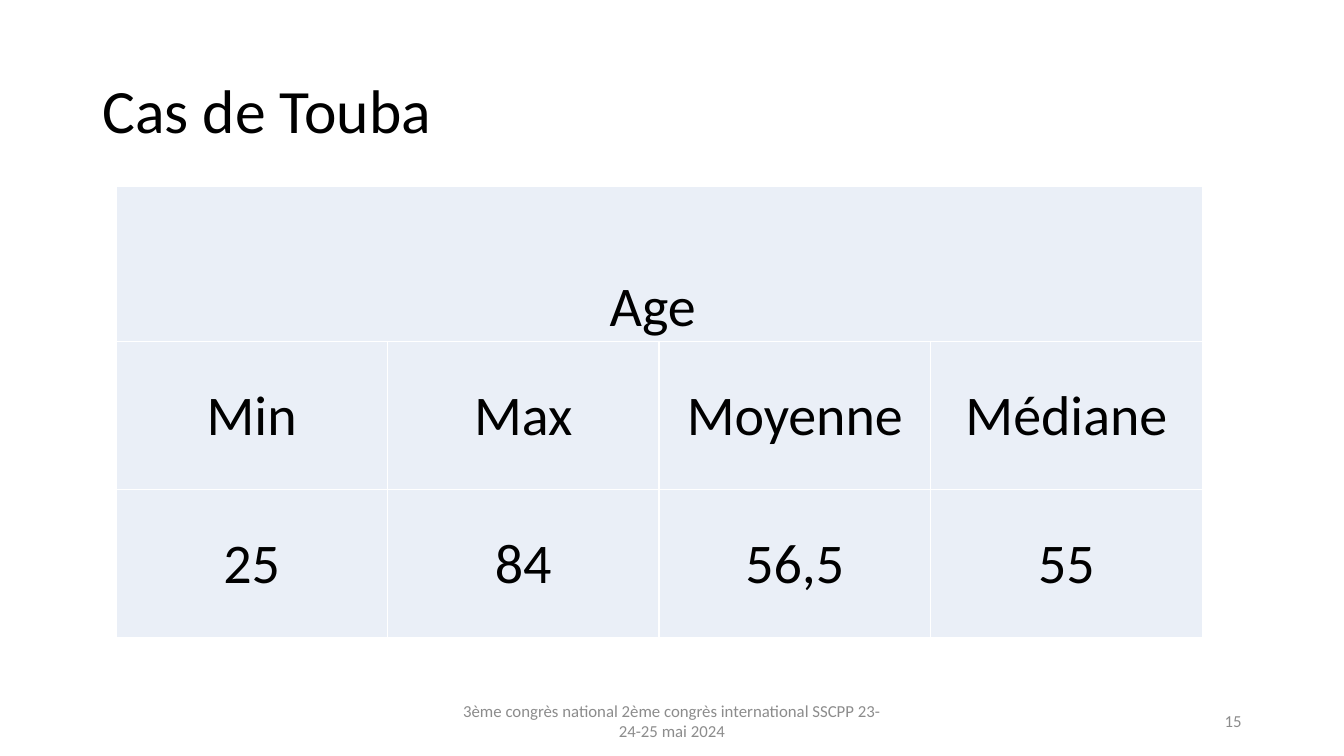
import pptx
import pptx.util
import pptx.dml.color
import pptx.enum.text
import pptx.oxml

Pt = pptx.util.Pt
RGB = pptx.dml.color.RGBColor.from_string
Align = pptx.enum.text.PP_ALIGN
Anchor = pptx.enum.text.MSO_ANCHOR

TITLE = "Cas de Touba"
HEAD = "Age "
ROWS = [
    ["Min", "Max", "Moyenne", "Médiane"],
    ["25", "84", "56,5", "55"],
]
FOOTERS = [
    ("15", (678, 500.5, 216, 28.8), Align.RIGHT),
    ("3ème congrès national 2ème congrès international SSCPP 23-24-25 mai 2024",
     (318, 500.5, 324, 28.8), Align.CENTER),
]
THEME = {
    "font": "Calibri",
    "ink": "000000",
    "muted": "8C8C8C",
    "cell": "EAEFF7",
    "rule": "FFFFFF",
    "title": 44,
    "body": 40,
    "small": 12,
}
TITLE_BOX = (66, 28.8, 828, 104.4)
GRID_BOX = (82.8, 133.2, 776, 322.4)
HEIGHTS = [110.8, 105.8, 105.8]
CELL = {"margin_left": Pt(0.7), "margin_right": Pt(0.7),
        "margin_top": Pt(0.7), "margin_bottom": Pt(0)}


def apply(item, values):
    for name, value in values.items():
        setattr(item, name, value)


def place(shape, box):
    apply(shape, dict(zip(("left", "top", "width", "height"), map(Pt, box))))


def write(frame, text, size, color, align, spacing=None):
    frame.text = text
    para = frame.paragraphs[0]
    apply(para, {"alignment": align, "line_spacing": spacing})
    font = para.runs[0].font
    apply(font, {"name": THEME["font"], "size": Pt(THEME[size]), "bold": False})
    font.color.rgb = RGB(THEME[color])


def border(cell):
    """Draw a 1 pt rule on all four sides; call before filling the cell."""
    props = cell._tc.get_or_add_tcPr()
    for side in "LRTB":
        props.append(pptx.oxml.parse_xml(
            f'<a:ln{side} xmlns:a="http://schemas.openxmlformats.org/drawingml/2006/main"'
            f' w="{Pt(1)}"><a:solidFill><a:srgbClr val="{THEME["rule"]}"/>'
            f'</a:solidFill></a:ln{side}>'))


def add_grid(slide):
    count = len(ROWS[0])
    table = slide.shapes.add_table(len(HEIGHTS), count, *map(Pt, GRID_BOX)).table
    apply(table, {"first_row": False, "horz_banding": False})
    for col in table.columns:
        col.width = Pt(GRID_BOX[2] / count)
    for row, height in zip(table.rows, HEIGHTS):
        row.height = Pt(height)
    for cell in table.iter_cells():
        border(cell)
        cell.fill.solid()
        cell.fill.fore_color.rgb = RGB(THEME["cell"])
        apply(cell, {**CELL, "vertical_anchor": Anchor.MIDDLE})
    head = table.cell(0, 0)
    head.merge(table.cell(0, count - 1))
    head.vertical_anchor = Anchor.BOTTOM
    write(head.text_frame, HEAD, "body", "ink", Align.CENTER)
    for r, words in enumerate(ROWS, 1):
        for c, word in enumerate(words):
            write(table.cell(r, c).text_frame, word, "body", "ink", Align.CENTER)


def main():
    deck = pptx.Presentation()
    apply(deck, {"slide_width": Pt(960), "slide_height": Pt(540)})
    slide = deck.slides.add_slide(deck.slide_layouts[5])

    title = slide.shapes.title
    place(title, TITLE_BOX)
    apply(title.text_frame, {"vertical_anchor": Anchor.MIDDLE,
                             "auto_size": pptx.enum.text.MSO_AUTO_SIZE.NONE})
    write(title.text_frame, TITLE, "title", "ink", Align.LEFT, 0.9)

    add_grid(slide)

    for text, box, align in FOOTERS:
        frame = slide.shapes.add_textbox(*map(Pt, box)).text_frame
        apply(frame, {"word_wrap": True, "vertical_anchor": Anchor.MIDDLE})
        write(frame, text, "small", "muted", align)

    deck.save("out.pptx")


if __name__ == "__main__":
    main()
